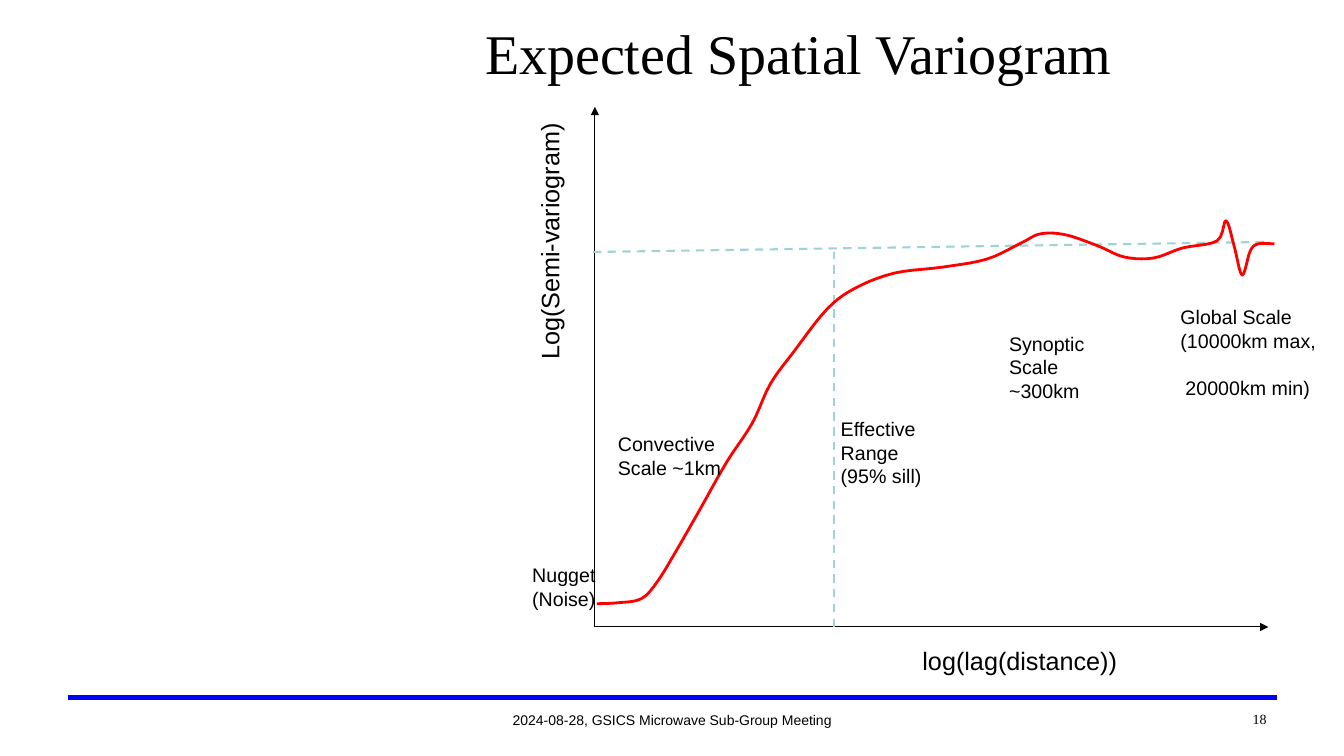
from dataclasses import dataclass

from lxml.etree import SubElement
from pptx import Presentation
from pptx.dml.color import RGBColor
from pptx.enum.dml import MSO_LINE_DASH_STYLE as Dash
from pptx.enum.shapes import MSO_CONNECTOR
from pptx.enum.text import MSO_ANCHOR, PP_ALIGN as Align
from pptx.oxml.ns import qn
from pptx.slide import Slide
from pptx.util import Pt

PX = 9144  # EMU per px, 100 px to the inch
COLORS = {"text": "000000", "rule": "0000FF", "guide": "9ED3D7", "curve": "FF0000"}
Point = tuple[float, float]


@dataclass
class Para:
    text: str
    before: int = 0  # points
    indent: int = 0  # px


@dataclass
class Label:
    x: int
    y: int
    w: int
    h: int
    paras: list[Para]
    size: int = 14
    font: str = "Arial"
    align: Align = Align.LEFT
    anchor: MSO_ANCHOR = MSO_ANCHOR.TOP
    upward: bool = False


@dataclass
class Line:
    x1: int
    y1: int
    x2: int
    y2: int
    color: str = "text"
    width: float = 0.75
    dashed: bool = False
    arrow: bool = False


LINES = [
    Line(67, 692, 1267, 692, "rule", 3),
    Line(590, 622, 590, 106, arrow=True),
    Line(590, 622, 1258, 622, arrow=True),
    Line(588, 250, 1258, 240, "guide", 1.5, dashed=True),
    Line(827, 622, 827, 250, "guide", 1.5, dashed=True),
]

LABELS = [
    Label(367, 15, 850, 73, [Para("Expected Spatial Variogram")], 40,
          "Times New Roman", Align.CENTER, MSO_ANCHOR.MIDDLE),
    Label(905, 635, 275, 40, [Para("log(lag(distance))")], 18),
    Label(525, 106, 50, 261, [Para("Log(Semi-variogram)")], 18, upward=True),
    Label(518, 554, 90, 57, [Para("Nugget (Noise)")]),
    Label(824, 409, 104, 81, [Para("Effective Range (95% sill)")]),
    Label(991, 324, 111, 81, [Para("Synoptic"), Para("Scale ~300km")]),
    Label(1161, 298, 156, 81, [Para("Global Scale"), Para("(10000km max,"),
                               Para("20000km min)", before=17, indent=5)]),
    Label(603, 424, 123, 57, [Para("Convective"), Para("Scale ~1km")]),
    Label(366, 701, 601, 25, [Para("2024-08-28, GSICS Microwave Sub-Group Meeting")],
          10, align=Align.CENTER),
    Label(1067, 700, 199, 25, [Para("18")], 10, "Times New Roman", Align.RIGHT),
]

VARIOGRAM = [
    (592, 599), (613, 598), (636, 594), (652, 577), (671, 546), (695, 504),
    (721, 458), (746, 420), (764, 381), (788, 348), (820, 307), (848, 286),
    (887, 271), (935, 265), (979, 257), (1013, 241), (1032, 232), (1057, 233),
    (1089, 244), (1115, 255), (1144, 256), (1173, 246), (1207, 239), (1216, 219),
    (1224, 244), (1232, 273), (1240, 249), (1248, 242), (1264, 242),
]


def rgb(name: str) -> RGBColor:
    return RGBColor.from_string(COLORS[name])


def smooth(knots: list[Point], steps: int = 5) -> list[Point]:
    """Points of a Catmull-Rom spline through the knots."""
    padded = [knots[0], *knots, knots[-1]]
    points = [knots[0]]
    for quad in zip(padded, padded[1:], padded[2:], padded[3:]):
        for step in range(1, steps + 1):
            t = step / steps
            x, y = (
                b + t / 2 * (c - a + t * (2*a - 5*b + 4*c - d + t * (3*b - 3*c + d - a)))
                for a, b, c, d in zip(*quad)
            )
            points.append((x, y))
    return points


def add_line(slide: Slide, line: Line) -> None:
    ends = (v * PX for v in (line.x1, line.y1, line.x2, line.y2))
    s = slide.shapes.add_connector(MSO_CONNECTOR.STRAIGHT, *ends)
    s.line.color.rgb = rgb(line.color)
    s.line.width = Pt(line.width)
    if line.dashed:
        s.line.dash_style = Dash.DASH
    if line.arrow:
        SubElement(s.line._get_or_add_ln(), qn("a:tailEnd"), type="triangle")
    SubElement(s._element.spPr, qn("a:effectLst"))


def add_label(slide: Slide, label: Label) -> None:
    box = (v * PX for v in (label.x, label.y, label.w, label.h))
    tf = slide.shapes.add_textbox(*box).text_frame
    tf.word_wrap = True
    tf.vertical_anchor = label.anchor
    if label.upward:
        tf._txBody.bodyPr.set("vert", "vert270")
    for i, para in enumerate(label.paras):
        p = tf.add_paragraph() if i else tf.paragraphs[0]
        p.alignment = label.align
        if para.before:
            p.space_before = Pt(para.before)
        if para.indent:
            p._p.get_or_add_pPr().set("marL", str(para.indent * PX))
        r = p.add_run()
        r.text = para.text
        r.font.name = label.font
        r.font.size = Pt(label.size)
        r.font.color.rgb = rgb("text")


def add_curve(slide: Slide, knots: list[Point]) -> None:
    points = [(x * PX, y * PX) for x, y in smooth(knots)]
    builder = slide.shapes.build_freeform(*points[0])
    builder.add_line_segments(points[1:], close=False)
    s = builder.convert_to_shape()
    s.shadow.inherit = False
    s.fill.background()
    s.line.color.rgb = rgb("curve")
    s.line.width = Pt(2)


def main() -> None:
    prs = Presentation()
    prs.slide_width, prs.slide_height = 1333 * PX, 750 * PX
    slide = prs.slides.add_slide(prs.slide_layouts[6])
    for line in LINES:
        add_line(slide, line)
    add_curve(slide, VARIOGRAM)
    for label in LABELS:
        add_label(slide, label)
    prs.save("out.pptx")


if __name__ == "__main__":
    main()
